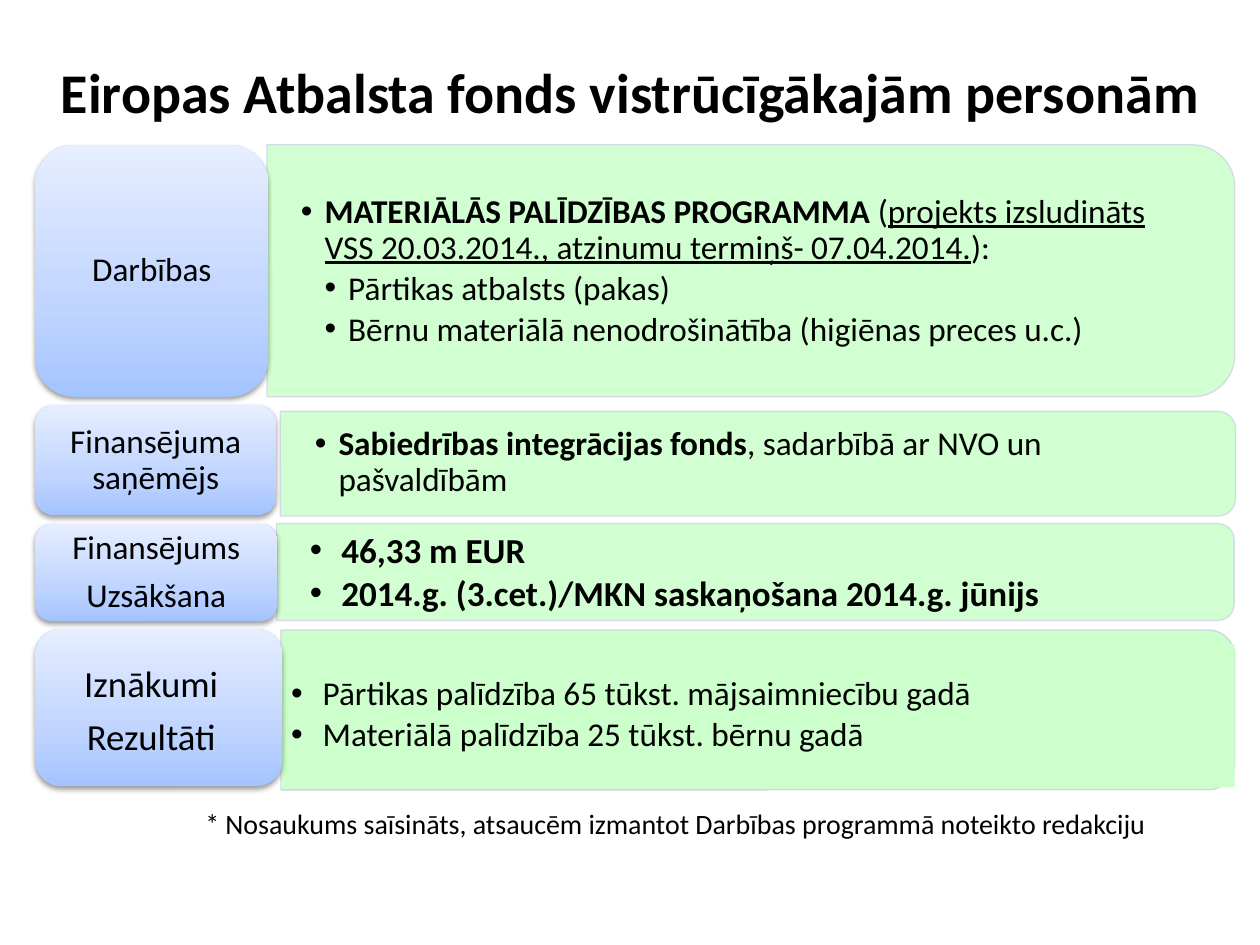
"""Build the slide on the European aid fund for the most deprived."""
from copy import deepcopy

from lxml.etree import SubElement
from pptx import Presentation
from pptx.dml.color import RGBColor
from pptx.enum.shapes import MSO_SHAPE
from pptx.enum.text import MSO_ANCHOR, MSO_AUTO_SIZE, PP_ALIGN
from pptx.oxml.ns import qn
from pptx.util import Pt

BLACK = RGBColor(0, 0, 0)
GREEN = RGBColor(0xCC, 0xFF, 0xCC)
EDGE = RGBColor(0xD0, 0xD8, 0xE8)
OPAQUE_EDGE = RGBColor(0xCB, 0xD3, 0xE3)
BLUES = [(0, RGBColor(0xA4, 0xC4, 0xFF)), (0.35, RGBColor(0xBF, 0xD4, 0xFF)),
         (1, RGBColor(0xE6, 0xEE, 0xFF))]
LABEL_LEFT = 20.2
LABEL_INSETS = (5.8, 2.9, 5.8, 2.9)
PANEL_INSETS = (19.4, 10.1, 19.4, 10.1)


class SlideBuilder:
    """Holds the style and the current slide."""

    def __init__(self, slide, font_name="Calibri"):
        self.slide = slide
        self.font_name = font_name

    def set_alpha(self, part, percent):
        color = part.find(".//" + qn("a:srgbClr"))
        SubElement(color, qn("a:alpha"), val=str(percent * 1000))

    def frame(self, shape, insets, anchor=MSO_ANCHOR.MIDDLE):
        frame = shape.text_frame
        frame.word_wrap = True
        frame.vertical_anchor = anchor
        (frame.margin_left, frame.margin_top,
         frame.margin_right, frame.margin_bottom) = map(Pt, insets)
        return frame

    def paragraphs(self, frame, contents, size, bold=False, align=PP_ALIGN.LEFT,
                   gap=0, spacing=None, indent=0):
        for index, content in enumerate(contents):
            paragraph = frame.add_paragraph() if index else frame.paragraphs[0]
            level, runs = content if isinstance(content, tuple) else (0, content)
            paragraph.alignment = align
            paragraph.level = level
            paragraph.space_after = Pt(round(gap * size, 2))
            if spacing:
                paragraph.line_spacing = spacing
            if indent:
                properties = paragraph._p.get_or_add_pPr()
                properties.set("marL", str(Pt(indent * level)))
                properties.set("indent", str(-Pt(indent)))
                SubElement(properties, qn("a:buFont"), typeface="Arial")
                SubElement(properties, qn("a:buChar"), char="•")
            font = paragraph.font
            font.name, font.size = self.font_name, Pt(size)
            font.color.rgb = BLACK
            if isinstance(runs, str):
                font.bold = bold
                paragraph.add_run().text = runs
                continue
            for words, run_bold, underline in runs:
                run = paragraph.add_run()
                run.text = words
                run.font.bold, run.font.underline = run_bold, underline

    def text(self, box, contents, size, insets=(7.2, 3.6, 7.2, 3.6),
             anchor=MSO_ANCHOR.MIDDLE, fill=None, grow=False, **style):
        if fill:
            shape = self.slide.shapes.add_shape(MSO_SHAPE.RECTANGLE, *map(Pt, box))
            shape.shadow.inherit = False
            shape.fill.solid()
            shape.fill.fore_color.rgb = fill
            shape.line.fill.background()
        else:
            shape = self.slide.shapes.add_textbox(*map(Pt, box))
        frame = self.frame(shape, insets, anchor)
        if grow:
            frame.auto_size = MSO_AUTO_SIZE.SHAPE_TO_FIT_TEXT
        self.paragraphs(frame, contents, size, **style)

    def bullets(self, box, items, size, indent, **style):
        self.text(box, items, size, indent=indent, gap=0.15, spacing=0.9, **style)

    def panel(self, left, top, width, height, edge=EDGE, alpha=None):
        turned = (left + (width - height) / 2, top + (height - width) / 2, height, width)
        shape = self.slide.shapes.add_shape(
            MSO_SHAPE.ROUND_2_SAME_RECTANGLE, *map(Pt, turned))
        shape.rotation = 90
        shape.shadow.inherit = False
        shape.fill.solid()
        shape.fill.fore_color.rgb = GREEN
        shape.line.color.rgb = edge
        shape.line.width = Pt(0.75)
        properties = shape._element.spPr
        if alpha:
            self.set_alpha(properties.find(qn("a:solidFill")), alpha)
        self.set_alpha(properties.find(qn("a:ln")), 90)

    def label(self, top, width, height, lines, size=19, insets=LABEL_INSETS):
        shape = self.slide.shapes.add_shape(
            MSO_SHAPE.ROUNDED_RECTANGLE, *map(Pt, (LABEL_LEFT, top, width, height)))
        shape.line.fill.background()
        shape.fill.gradient()
        shape.fill.gradient_angle = 90
        properties = shape._element.spPr
        stops = properties.find(".//" + qn("a:gsLst"))
        stops.append(deepcopy(stops[0]))
        for stop, (position, color) in zip(shape.fill.gradient_stops, BLUES):
            stop.position = position
            stop.color.rgb = color
        shape.shadow.inherit = False
        shadow = SubElement(properties.find(qn("a:effectLst")), qn("a:outerShdw"),
                            blurRad=str(Pt(3.1)), dist=str(Pt(1.6)),
                            dir="5400000", rotWithShape="0")
        SubElement(shadow, qn("a:srgbClr"), val=str(BLACK))
        self.set_alpha(shadow, 38)
        self.paragraphs(self.frame(shape, insets), lines, size,
                        align=PP_ALIGN.CENTER, gap=0.35, spacing=0.9)


def main():
    presentation = Presentation()
    presentation.slide_width, presentation.slide_height = Pt(720), Pt(540)
    builder = SlideBuilder(presentation.slides.add_slide(presentation.slide_layouts[6]))

    builder.text((22.3, 15.1, 676.1, 73.4),
                 ["Eiropas Atbalsta fonds vistrūcīgākajām personām"],
                 32, bold=True, align=PP_ALIGN.CENTER)

    programme = [
        ("MATERIĀLĀS PALĪDZĪBAS PROGRAMMA ", True, False),
        ("(", False, False),
        ("projekts izsludināts VSS 20.03.2014., atzinumu termiņš- 07.04.2014.", False, True),
        ("):", False, False)]
    recipient = [("Sabiedrības integrācijas fonds", True, False),
                 (", sadarbībā ar NVO un pašvaldībām", False, False)]
    rows = [
        ((152.6, 82.8, 553, 144), (152.6, 90, 545.8, 130.3),
         [(1, programme), (2, "Pārtikas atbalsts (pakas)"),
          (2, "Bērnu materiālā nenodrošinātība (higiēnas preces u.c.)")],
         19, 13.5, False, (82.8, 133.2, 144), ["Darbības"]),
        ((160.2, 235.1, 545.8, 59.8), (160.6, 237.6, 542.2, 54),
         [(1, recipient)],
         19, 13.5, False, (231.8, 137.5, 62.6), ["Finansējuma saņēmējs"]),
        ((158, 299.2, 547.2, 55.4), (157.7, 302.4, 545, 50.4),
         [(1, "46,33 m EUR"), (1, "2014.g. (3.cet.)/MKN saskaņošana 2014.g. jūnijs")],
         20, 18, True, (299.5, 138.2, 55.4), ["Finansējums", "Uzsākšana"])]
    for panel, text_box, items, size, indent, bold, label, lines in rows:
        builder.panel(*panel, alpha=90)
        builder.bullets(text_box, items, size, indent, bold=bold, insets=PANEL_INSETS)
        builder.label(*label, lines)

    builder.panel(160.6, 360, 545, 91.4, edge=OPAQUE_EDGE)
    builder.bullets((160.6, 367.9, 545, 82.1),
                    [(1, "Pārtikas palīdzība 65 tūkst. mājsaimniecību gadā"),
                     (1, "Materiālā palīdzība 25 tūkst. bērnu gadā")],
                    19, 18, insets=LABEL_INSETS, fill=GREEN)
    builder.label(359.3, 141.1, 90, ["Iznākumi", "Rezultāti"], size=21,
                  insets=(5.8, 8, 14.4, 2.9))

    builder.text((110.2, 457.2, 601.2, 26.6),
                 ["* Nosaukums saīsināts, atsaucēm izmantot Darbības programmā noteikto redakciju"],
                 16, anchor=MSO_ANCHOR.TOP, grow=True)
    presentation.save("out.pptx")


if __name__ == "__main__":
    main()
